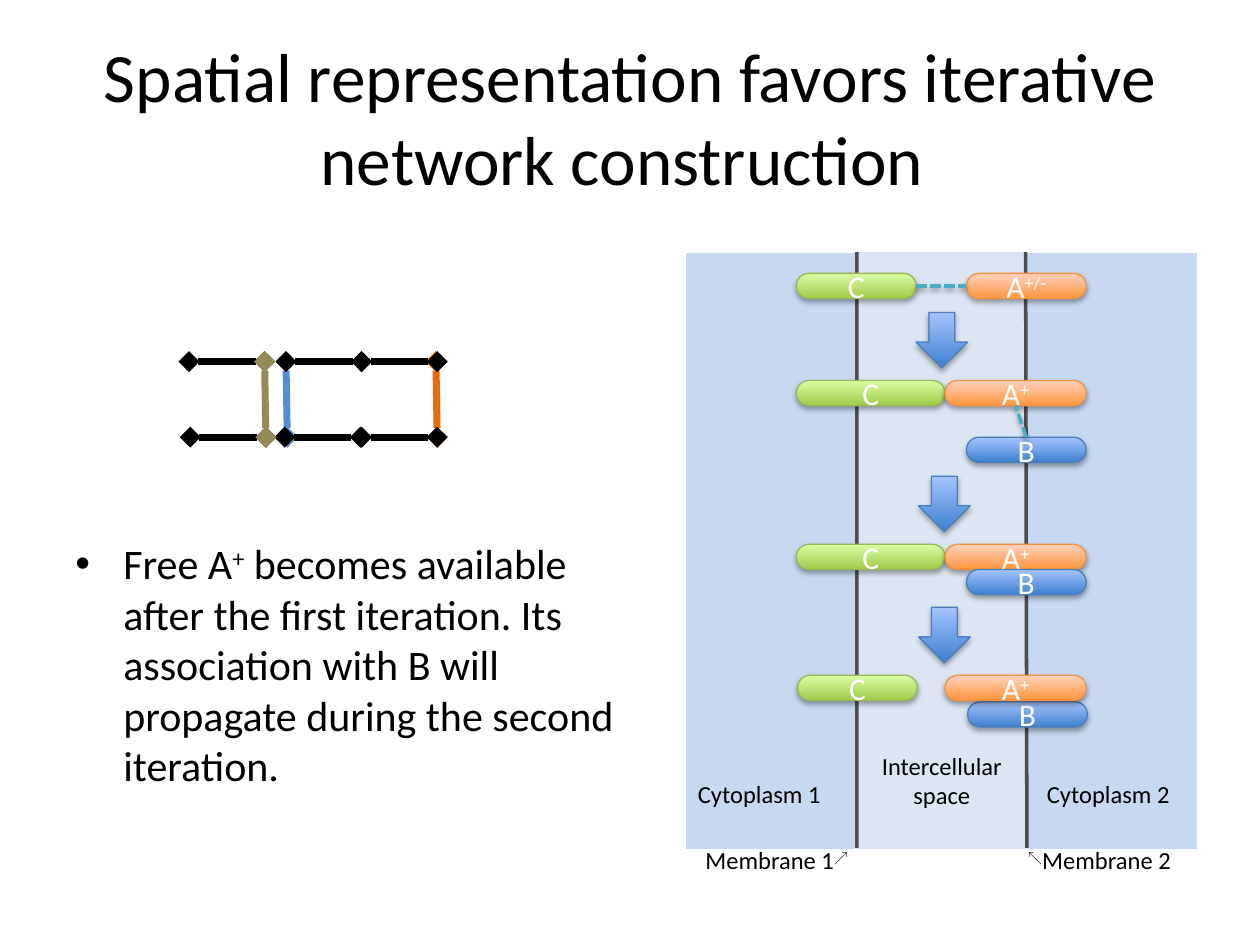
from dataclasses import dataclass

from lxml.etree import SubElement
from pptx import Presentation
from pptx.dml.color import RGBColor
from pptx.enum.dml import MSO_LINE
from pptx.enum.shapes import MSO_CONNECTOR, MSO_SHAPE
from pptx.enum.text import MSO_ANCHOR, PP_ALIGN
from pptx.oxml import parse_xml
from pptx.oxml.ns import nsdecls, qn
from pptx.util import Inches, Pt


@dataclass(frozen=True)
class Theme:
    font: str = "Calibri"
    symbol_font: str = "Arial"
    title: float = 39.6
    body: int = 24
    bar: int = 18
    label: int = 14
    black: str = "000000"
    white: str = "FFFFFF"
    cytoplasm: str = "C6D9F1"
    intercellular: str = "DCE6F2"
    membrane: str = "262626"
    interaction: str = "4BACC6"
    blue_edge: str = "558ED5"
    orange_edge: str = "E46C0A"
    olive_edge: str = "948A54"
    # gradient start (bottom), gradient end (top), outline
    green: tuple = ("A0CA4A", "DAFFA5", "98B955")
    orange: tuple = ("FF953E", "FFD2BD", "F69240")
    blue: tuple = ("3F80CE", "A4C4FF", "4B7EBC")


theme = Theme()
rgb = RGBColor.from_string

prs = Presentation()
prs.slide_width, prs.slide_height = Inches(10), Inches(7.5)
slide = prs.slides.add_slide(prs.slide_layouts[6])
shapes = slide.shapes


def write(frame, runs, size, color, align=PP_ALIGN.LEFT):
    """Fill the first paragraph; a run is (text, font, raised)."""
    paragraph = frame.paragraphs[0]
    paragraph.alignment = align
    for text, font, raised in runs:
        run = paragraph.add_run()
        run.text = text
        run.font.name = font
        run.font.size = Pt(size)
        run.font.color.rgb = rgb(color)
        if raised:
            run.font._element.set("baseline", "30000")
    return paragraph


def add_effects(part, opacity=0):
    """Give a shape or connector a soft shadow below, or none at opacity 0."""
    shadow = (
        '<a:outerShdw blurRad="39370" dist="22860" dir="5400000" rotWithShape="0">'
        f'<a:srgbClr val="000000"><a:alpha val="{opacity * 1000}"/></a:srgbClr>'
        "</a:outerShdw>"
    ) if opacity else ""
    part._element.spPr.append(
        parse_xml(f'<a:effectLst {nsdecls("a")}>{shadow}</a:effectLst>'))


# Explanation and title
body = shapes.add_textbox(Inches(0.5), Inches(4.22), Inches(4.51), Inches(2.48))
body.text_frame.word_wrap = True
bullet = write(body.text_frame, [
    ("Free A", theme.font, False),
    ("+", theme.font, True),
    (" becomes available after the first iteration. Its association with B "
     "will propagate during the second iteration.", theme.font, False),
], theme.body, theme.black)
bullet.space_before = Pt(4.8)
bullet_format = bullet._p.get_or_add_pPr()
bullet_format.set("marL", str(Inches(0.38)))
bullet_format.set("indent", str(-Inches(0.38)))
SubElement(bullet_format, qn("a:buFont")).set("typeface", theme.symbol_font)
SubElement(bullet_format, qn("a:buChar")).set("char", "•")

title = shapes.add_textbox(Inches(0.5), Inches(0.3), Inches(9), Inches(1.25))
title.text_frame.word_wrap = True
title.text_frame.vertical_anchor = MSO_ANCHOR.MIDDLE
write(title.text_frame,
      [("Spatial representation favors iterative network construction ", theme.font, False)],
      theme.title, theme.black, PP_ALIGN.CENTER)

# Network: two rows of nodes joined by edges
TOP, BOTTOM = 2.87, 3.47
for x1, y1, x2, y2, color in [
    (2.11, BOTTOM, 1.51, BOTTOM, theme.black),
    (2.1, TOP, 1.5, TOP, theme.black),
    (2.27, TOP, 2.28, BOTTOM, theme.blue_edge),
    (2.87, TOP, 2.27, TOP, theme.black),
    (3.46, TOP, 3.47, BOTTOM, theme.orange_edge),
    (2.86, BOTTOM, 2.26, BOTTOM, theme.black),
    (3.47, TOP, 2.87, TOP, theme.black),
    (3.47, BOTTOM, 2.87, BOTTOM, theme.black),
    (2.1, TOP, 2.11, BOTTOM, theme.olive_edge),
]:
    edge = shapes.add_connector(MSO_CONNECTOR.STRAIGHT, Inches(x1), Inches(y1),
                                Inches(x2), Inches(y2))
    edge.line.color.rgb = rgb(color)
    edge.line.width = Pt(4)
    for end in ("a:headEnd", "a:tailEnd"):
        SubElement(edge.line._get_or_add_ln(), qn(end)).set("type", "diamond")
    add_effects(edge)

# Compartments and the membranes between them
PANEL_WIDTH = 1.355
for column, color in enumerate([theme.cytoplasm, theme.intercellular, theme.cytoplasm]):
    compartment = shapes.add_shape(
        MSO_SHAPE.RECTANGLE, Inches(5.44 + column * PANEL_WIDTH), Inches(2),
        Inches(PANEL_WIDTH), Inches(4.74))
    compartment.shadow.inherit = False
    compartment.fill.solid()
    compartment.fill.fore_color.rgb = rgb(color)
    if color == theme.cytoplasm:
        compartment.line.color.rgb = rgb(theme.white)
        compartment.line.width = Pt(0.75)
    else:
        compartment.line.fill.background()

for top_x, bottom_x in [(6.8, 6.8), (8.14, 8.15)]:
    membrane = shapes.add_connector(MSO_CONNECTOR.STRAIGHT, Inches(top_x), Inches(2),
                                    Inches(bottom_x), Inches(6.73))
    membrane.line.color.rgb = rgb(theme.membrane)
    membrane.line.width = Pt(2)
    line_color = membrane._element.spPr.find(".//" + qn("a:srgbClr"))
    SubElement(line_color, qn("a:alpha")).set("val", "80000")
    add_effects(membrane)

# Molecules of the four stages and the arrows between the stages
BAR, ARROW = MSO_SHAPE.ROUNDED_RECTANGLE, MSO_SHAPE.DOWN_ARROW
SHORT, C_BOUND, A_BOUND = 0.95, 1.18, 1.12
glossy_parts = []
for kind, x, y, width, height, palette, name, charge in [
    (BAR, 6.32, 4.32, C_BOUND, 0.2, theme.green, "C", ""),
    (BAR, 7.5, 4.32, A_BOUND, 0.2, theme.orange, "A", "+"),
    (BAR, 7.67, 4.52, SHORT, 0.2, theme.blue, "B", ""),
    (BAR, 6.32, 2.17, SHORT, 0.2, theme.green, "C", ""),
    (BAR, 7.67, 2.17, SHORT, 0.2, theme.orange, "A", "+/-"),
    (BAR, 6.32, 3.02, C_BOUND, 0.2, theme.green, "C", ""),
    (BAR, 7.5, 3.02, A_BOUND, 0.2, theme.orange, "A", "+"),
    (BAR, 7.67, 3.47, SHORT, 0.2, theme.blue, "B", ""),
    (BAR, 6.33, 5.36, SHORT, 0.2, theme.green, "C", ""),
    (BAR, 7.68, 5.57, SHORT, 0.2, theme.blue, "B", ""),
    (BAR, 7.5, 5.36, A_BOUND, 0.2, theme.orange, "A", "+"),
    (ARROW, 7.27, 2.48, 0.41, 0.44, theme.blue, "", ""),
    (ARROW, 7.29, 3.78, 0.41, 0.44, theme.blue, "", ""),
    (ARROW, 7.29, 4.82, 0.41, 0.44, theme.blue, "", ""),
]:
    part = shapes.add_shape(kind, Inches(x), Inches(y), Inches(width), Inches(height))
    part.fill.gradient()
    part.fill.gradient_angle = 90
    for stop, color in zip(part.fill.gradient_stops, palette):
        stop.color.rgb = rgb(color)
    part.line.color.rgb = rgb(palette[2])
    part.line.width = Pt(0.75)
    add_effects(part, 35)
    if kind == BAR:
        part.adjustments[0] = 0.5
        part.text_frame.vertical_anchor = MSO_ANCHOR.MIDDLE
        runs = [(name, theme.font, False)]
        if charge:
            runs.append((charge, theme.font, True))
        write(part.text_frame, runs, theme.bar, theme.white, PP_ALIGN.CENTER)
    glossy_parts.append(part)

free_c, free_a, bound_a, free_b = (glossy_parts[i] for i in (3, 4, 6, 7))
for source, source_side, target, target_side in [(free_c, 3, free_a, 1),
                                                 (free_b, 0, bound_a, 2)]:
    interaction = shapes.add_connector(MSO_CONNECTOR.STRAIGHT, 0, 0, 0, 0)
    interaction.begin_connect(source, source_side)
    interaction.end_connect(target, target_side)
    interaction.line.color.rgb = rgb(theme.interaction)
    interaction.line.width = Pt(2)
    interaction.line.dash_style = MSO_LINE.SQUARE_DOT
    add_effects(interaction, 38)

# Labels
for x, y, width, height, wrap, align, runs in [
    (5.44, 6.13, 1.29, 0.34, False, PP_ALIGN.LEFT, [("Cytoplasm 1", theme.font, False)]),
    (8.21, 6.13, 1.29, 0.34, False, PP_ALIGN.LEFT, [("Cytoplasm 2", theme.font, False)]),
    (6.8, 5.91, 1.35, 0.57, True, PP_ALIGN.CENTER,
     [("Intercellular space", theme.font, False)]),
    (5.5, 6.66, 1.42, 0.34, False, PP_ALIGN.LEFT,
     [("Membrane 1", theme.font, False), ("↗", theme.symbol_font, True)]),
    (8.06, 6.66, 1.42, 0.34, False, PP_ALIGN.LEFT,
     [("↖", theme.symbol_font, True), ("Membrane 2", theme.font, False)]),
]:
    label = shapes.add_textbox(Inches(x), Inches(y), Inches(width), Inches(height))
    label.text_frame.word_wrap = wrap
    write(label.text_frame, runs, theme.label, theme.black, align)

prs.save("out.pptx")
